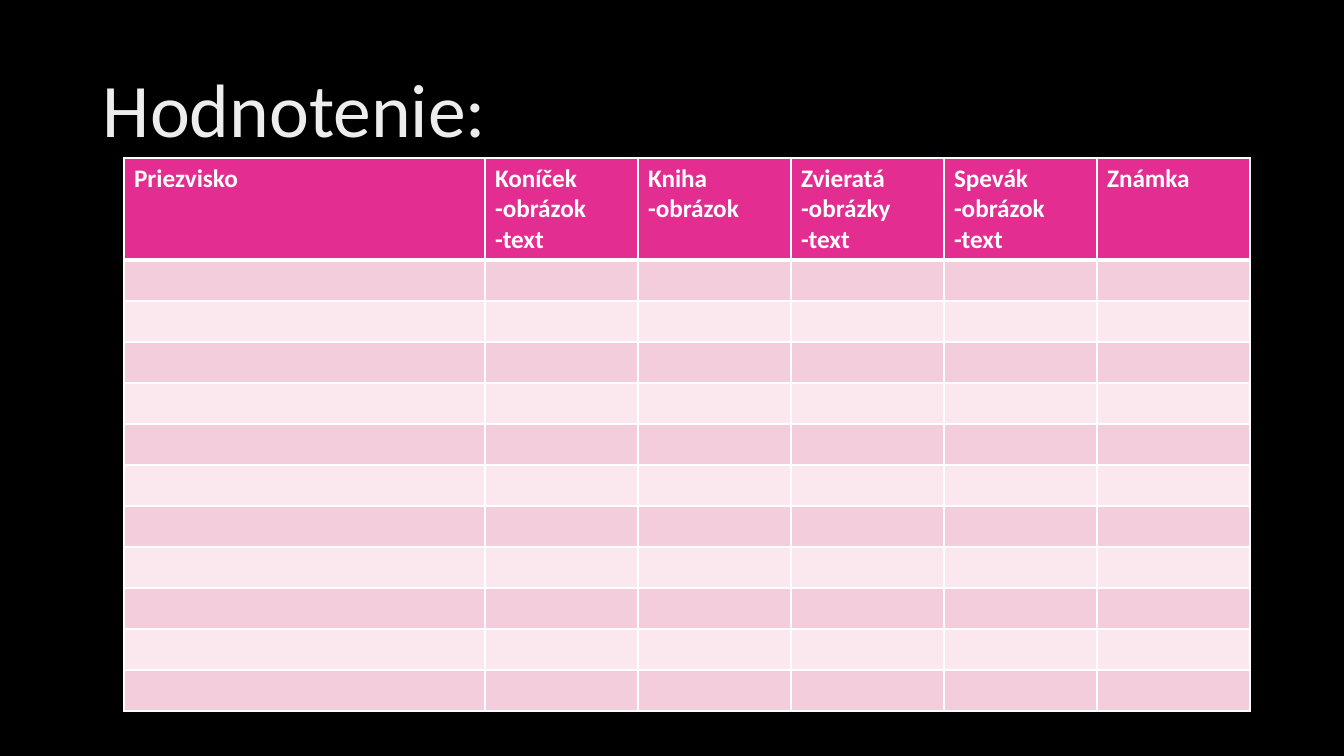
from lxml import etree
from pptx import Presentation, util as u
from pptx.dml.color import RGBColor
from pptx.enum import text
from pptx.oxml.ns import qn

PINK, ROSE, BLUSH, WHITE = "E32D91", "F4CDDC", "FAE8EE", "FFFFFF"
HEADINGS = [
    "Priezvisko",
    "Koníček\n-obrázok\n-text",
    "Kniha\n-obrázok",
    "Zvieratá\n-obrázky\n-text",
    "Spevák\n-obrázok\n-text",
    "Známka",
]
COLUMN_WIDTHS = [361] + [153] * 5
ROW_HEIGHTS = [102] + [41] * 11


def px(n):
    return u.Emu(round(n * 914400 / 100.8))


def color(hex_string):
    return RGBColor.from_string(hex_string)


prs = Presentation()
prs.slide_width, prs.slide_height = px(1344), px(756)
slide = prs.slides.add_slide(prs.slide_layouts[6])
slide.background.fill.solid()
slide.background.fill.fore_color.rgb = color("000000")

title = slide.shapes.add_textbox(px(93), px(40), px(1159), px(146)).text_frame
title.word_wrap = True
title.vertical_anchor = text.MSO_ANCHOR.MIDDLE
title.text = "Hodnotenie:"
title.paragraphs[0].line_spacing = 0.9
title_font = title.paragraphs[0].runs[0].font
title_font.name, title_font.size = "Calibri", u.Pt(54)
title_font.color.rgb = color("EDEDED")

grades = slide.shapes.add_table(
    len(ROW_HEIGHTS), len(COLUMN_WIDTHS), px(124), px(158),
    px(sum(COLUMN_WIDTHS)), px(sum(ROW_HEIGHTS))).table
for column, width in zip(grades.columns, COLUMN_WIDTHS):
    column.width = px(width)

for r, height in enumerate(ROW_HEIGHTS):
    grades.rows[r].height = px(height)
    fill = PINK if r == 0 else ROSE if r % 2 else BLUSH
    for c, heading in enumerate(HEADINGS):
        cell = grades.cell(r, c)
        # Borders precede the fill in the cell properties
        properties = cell._tc.get_or_add_tcPr()
        for side in ("lnL", "lnR", "lnT", "lnB"):
            thick = (r, side) in ((0, "lnB"), (1, "lnT"))
            border = etree.SubElement(properties, qn(f"a:{side}"), w=str(u.Pt(3 if thick else 1)))
            solid = etree.SubElement(border, qn("a:solidFill"))
            etree.SubElement(solid, qn("a:srgbClr"), val=WHITE)
        cell.fill.solid()
        cell.fill.fore_color.rgb = color(fill)
        if r == 0:
            cell.text_frame.text = heading
            for paragraph in cell.text_frame.paragraphs:
                font = paragraph.runs[0].font
                font.name, font.size, font.bold = "Calibri", u.Pt(18), True
                font.color.rgb = color(WHITE)

prs.save("out.pptx")
